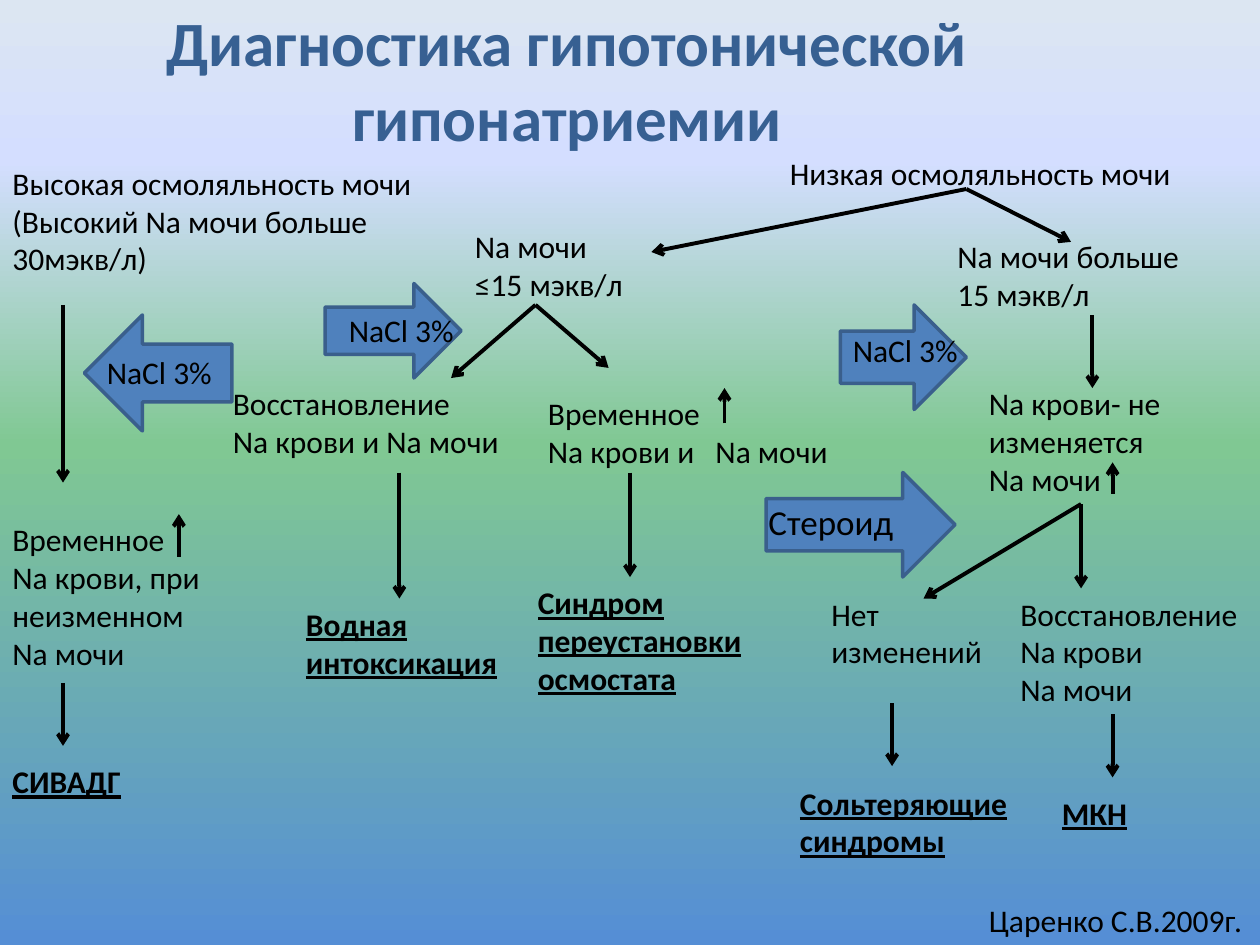
from dataclasses import dataclass

from lxml.etree import SubElement
from pptx import Presentation
from pptx.dml.color import RGBColor
from pptx.enum.shapes import MSO_CONNECTOR, MSO_SHAPE
from pptx.enum.text import MSO_ANCHOR, MSO_AUTO_SIZE, PP_ALIGN
from pptx.oxml.ns import qn
from pptx.slide import Slide
from pptx.util import Inches, Pt


@dataclass(frozen=True)
class Theme:
    font: str = "Calibri"
    ink: str = "000000"
    title: str = "376092"
    fill: str = "4F81BD"
    outline: str = "3A5F8C"
    background: tuple = ((0, "558ED5"), (53, "80C893"), (83, "D4DEFF"), (100, "DCE6F2"))
    title_size: int = 36
    label_size: int = 20
    body_size: int = 18
    connector_width: float = 2.25
    outline_width: float = 2


THEME = Theme()


@dataclass(frozen=True)
class Note:
    text: str
    left: float
    top: float
    width: float
    height: float
    diagnosis: bool = False


@dataclass(frozen=True)
class Link:
    x1: float
    y1: float
    x2: float
    y2: float


@dataclass(frozen=True)
class Test:
    left: float
    top: float
    width: float
    height: float
    label: Note
    rotation: int = 0
    size: int = THEME.body_size


NOTES = [
    Note("Высокая осмоляльность мочи\n(Высокий Na мочи больше 30мэкв/л)", 0, 1.25, 3.75, 1.01),
    Note("Низкая осмоляльность мочи", 6.17, 1.17, 3.33, 0.4),
    Note("Na мочи\n≤15 мэкв/л", 3.67, 1.75, 1.58, 1.01),
    Note("Na мочи больше 15 мэкв/л", 7.5, 1.83, 2.17, 1.01),
    Note("Na крови- не изменяется\nNa мочи", 7.75, 3, 2.5, 1.31),
    Note("Восстановление Na крови\nNa мочи", 8, 4.67, 2, 1.31),
    Note("Нет изменений", 6.5, 4.67, 1.58, 0.71),
    Note("Временное\nNa крови и\tNa мочи", 4.25, 3.08, 2.75, 0.71),
    Note("Восстановление\nNa крови и Na мочи", 1.75, 3, 2.67, 0.71),
    Note("Временное\nNa крови, при неизменном\nNa мочи", 0, 4.08, 1.83, 1.31),
    Note("МКН", 8.33, 6.25, 1, 0.42, True),
    Note("Сольтеряющие синдромы", 6.25, 6.17, 1.92, 0.71, True),
    Note("Синдром переустановки осмостата", 4.17, 4.58, 1.83, 1.01, True),
    Note("Водная интоксикация", 2.33, 4.75, 2.08, 0.71, True),
    Note("СИВАДГ", 0, 6, 1.25, 0.4, True),
    Note("Царенко С.В.2009г.", 7.75, 7.1, 2.25, 0.4),
]

LINKS = [
    Link(7.67, 1.5, 5.17, 2),
    Link(7.67, 1.5, 8.5, 1.92),
    Link(8.67, 2.5, 8.67, 3.08),
    Link(8.58, 4, 8.58, 4.67),
    Link(8.58, 4, 7.33, 4.75),
    Link(8.83, 5.67, 8.83, 6.17),
    Link(7.08, 5.58, 7.08, 6.08),
    Link(4.25, 2.42, 3.58, 3),
    Link(4.25, 2.42, 4.83, 2.92),
    Link(5, 3.75, 5, 4.58),
    Link(3.17, 3.75, 3.17, 4.75),
    Link(0.5, 2.42, 0.5, 3.83),
    Link(0.5, 5.42, 0.5, 5.92),
    Link(5.75, 3.36, 5.75, 3.08),
    Link(8.83, 3.92, 8.83, 3.67),
    Link(1.42, 4.42, 1.42, 4.08),
]

TESTS = [
    Test(6.67, 2.42, 1, 0.83, Note("NaCl 3%", 6.67, 2.58, 1.5, 0.4)),
    Test(2.58, 2.25, 1.08, 0.75, Note("NaCl 3%", 2.67, 2.42, 1.5, 0.4)),
    Test(0.67, 2.5, 1.17, 0.92, Note("NaCl 3%", 0.75, 2.75, 1.5, 0.4), rotation=180),
    Test(6.08, 3.75, 1.5, 0.83, Note("Стероид", 6, 3.92, 1.42, 0.44), size=THEME.label_size),
]


def add_text(s: Slide, note: Note, *, size: int = THEME.body_size, color: str = THEME.ink,
             bold: bool = False, underline: bool = False, align: PP_ALIGN = PP_ALIGN.LEFT,
             anchor: MSO_ANCHOR = MSO_ANCHOR.TOP, grow: bool = True) -> None:
    sp = s.shapes.add_textbox(Inches(note.left), Inches(note.top),
                              Inches(note.width), Inches(note.height))
    tf = sp.text_frame
    tf.word_wrap = True
    tf.auto_size = MSO_AUTO_SIZE.SHAPE_TO_FIT_TEXT if grow else MSO_AUTO_SIZE.NONE
    tf.vertical_anchor = anchor
    for i, line in enumerate(note.text.split("\n")):
        p = tf.add_paragraph() if i else tf.paragraphs[0]
        p.alignment = align
        if "\t" in line:
            tabs = SubElement(p._p.get_or_add_pPr(), qn("a:tabLst"))
            SubElement(tabs, qn("a:tab"), pos=str(Inches(1.33)), algn="l")
        r = p.add_run()
        r.text = line
        r.font.name = THEME.font
        r.font.size = Pt(size)
        r.font.bold = bold
        r.font.underline = underline
        r.font.color.rgb = RGBColor.from_string(color)


def add_link(s: Slide, link: Link) -> None:
    cxn = s.shapes.add_connector(MSO_CONNECTOR.STRAIGHT, Inches(link.x1), Inches(link.y1),
                                 Inches(link.x2), Inches(link.y2))
    cxn.line.color.rgb = RGBColor.from_string(THEME.ink)
    cxn.line.width = Pt(THEME.connector_width)
    SubElement(cxn.line._get_or_add_ln(), qn("a:tailEnd"), type="arrow")
    SubElement(cxn._element.spPr, qn("a:effectLst"))


def add_test(s: Slide, test: Test) -> None:
    sp = s.shapes.add_shape(MSO_SHAPE.RIGHT_ARROW, Inches(test.left), Inches(test.top),
                            Inches(test.width), Inches(test.height))
    sp.rotation = test.rotation
    sp.shadow.inherit = False
    sp.fill.solid()
    sp.fill.fore_color.rgb = RGBColor.from_string(THEME.fill)
    sp.line.color.rgb = RGBColor.from_string(THEME.outline)
    sp.line.width = Pt(THEME.outline_width)


def set_background(s: Slide) -> None:
    fill = s.background.fill
    fill.gradient()
    fill.gradient_angle = 90
    stops = s.element.find(".//" + qn("a:gsLst"))
    for stop in list(stops):
        stops.remove(stop)
    for position, color in THEME.background:
        stop = SubElement(stops, qn("a:gs"), pos=str(position * 1000))
        SubElement(stop, qn("a:srgbClr"), val=color)


def main() -> None:
    prs = Presentation()
    prs.slide_width, prs.slide_height = Inches(10), Inches(7.5)
    s = prs.slides.add_slide(prs.slide_layouts[6])
    set_background(s)
    add_text(s, Note("Диагностика гипотонической гипонатриемии", 0, 0, 9, 1.25),
             size=THEME.title_size, color=THEME.title, bold=True,
             align=PP_ALIGN.CENTER, anchor=MSO_ANCHOR.MIDDLE, grow=False)
    for note in NOTES:
        add_text(s, note, bold=note.diagnosis, underline=note.diagnosis)
    for link in LINKS:
        add_link(s, link)
    for test in TESTS:
        add_test(s, test)
        add_text(s, test.label, size=test.size)
    prs.save("out.pptx")


if __name__ == "__main__":
    main()
